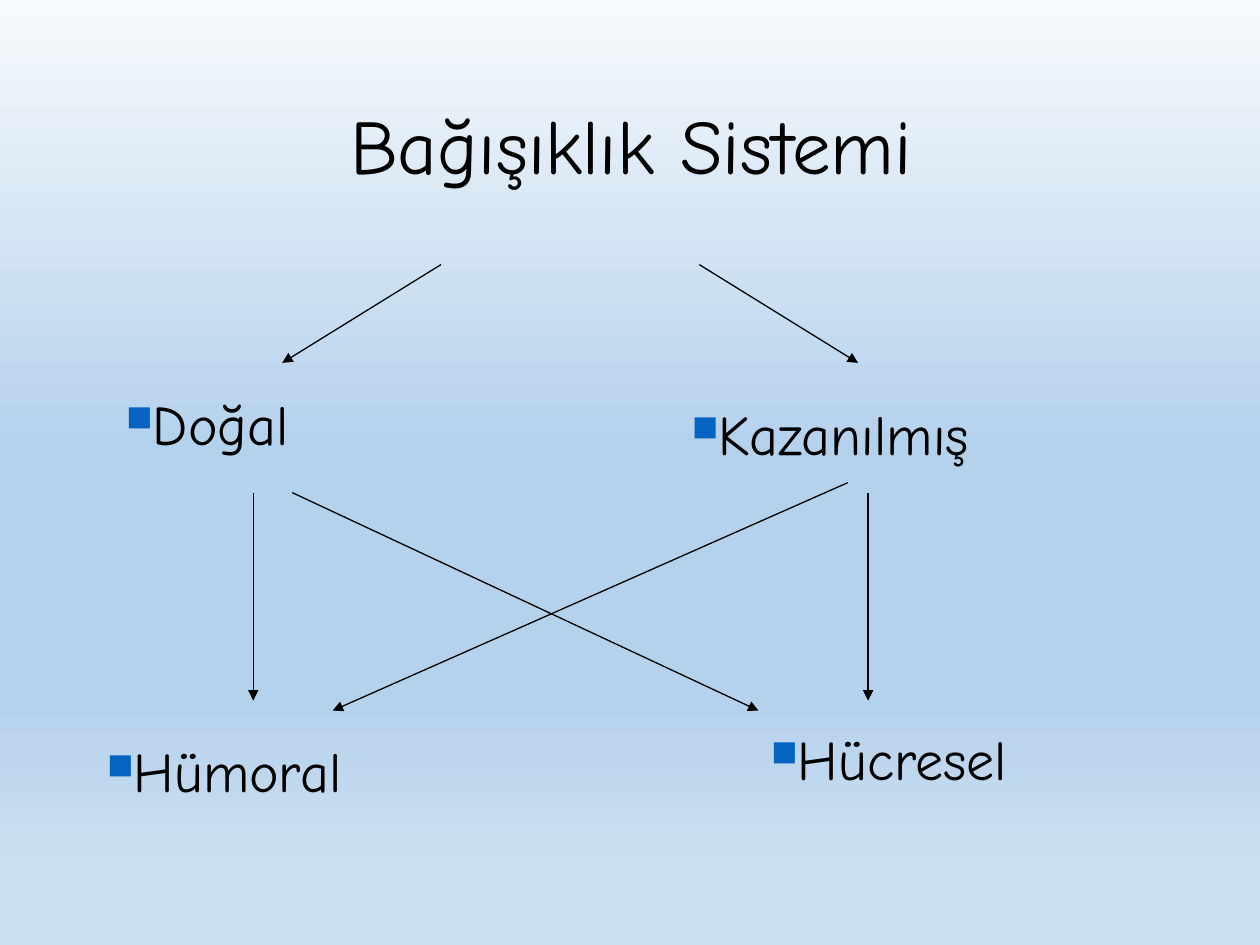
from lxml import etree
from pptx import Presentation
from pptx.dml.color import RGBColor
from pptx.enum.shapes import MSO_CONNECTOR
from pptx.enum.text import MSO_ANCHOR, MSO_AUTO_SIZE, PP_ALIGN
from pptx.oxml.ns import qn
from pptx.util import Inches, Pt

STRAIGHT = MSO_CONNECTOR.STRAIGHT
MIDDLE = MSO_ANCHOR.MIDDLE
FIT_SHAPE, FIT_NONE = MSO_AUTO_SIZE.SHAPE_TO_FIT_TEXT, MSO_AUTO_SIZE.NONE
LEFT, CENTER = PP_ALIGN.LEFT, PP_ALIGN.CENTER
FONT = "Comic Neue"
BLACK, BULLET_BLUE = "000000", "0563C1"
BACKGROUND_STOPS = [(0, "F7FAFD"), (47, "B5D2EC"), (74, "B5D2EC"), (94, "CEE1F2")]
LABELS = [
    ("Doğal", 0.9, 3.04, 2.44, True),
    ("Kazanılmış", 5.39, 3.12, 3.47, True),
    ("Hümoral", 0.75, 5.8, 2.84, True),
    ("Hücresel", 6.02, 5.7, 2.26, False),
]
ARROWS = [
    ((3.5, 2.1), (2.24, 2.88)),
    ((5.55, 2.1), (6.81, 2.88)),
    ((2.01, 3.91), (2.01, 5.56)),
    ((2.32, 3.91), (6.02, 5.64)),
    ((6.73, 3.83), (2.64, 5.64)),
    ((6.89, 3.91), (6.89, 5.56)),
]


def color(value):
    return RGBColor.from_string(value)


def add_xml(parent, tag, **attributes):
    return etree.SubElement(parent, qn(tag), attributes)


def set_background(s):
    fill = s.background.fill
    fill.gradient()
    fill.gradient_angle = 270
    stops = s.element.find(".//" + qn("a:gsLst"))
    for stop in list(stops):
        stops.remove(stop)
    for position, value in BACKGROUND_STOPS:
        stop = add_xml(stops, "a:gs", pos=str(position * 1000))
        add_xml(stop, "a:srgbClr", val=value)


def write_text(tf, text, size, align=LEFT, space_before=0, line_spacing=1.0):
    p = tf.paragraphs[0]
    p.alignment = align
    p.line_spacing = line_spacing
    p.space_before = Pt(space_before)
    r = p.add_run()
    r.text = text
    r.font.name = FONT
    r.font.size = Pt(size)
    r.font.color.rgb = color(BLACK)
    return p


def add_bullet(p):
    properties = p._p.get_or_add_pPr()
    add_xml(add_xml(properties, "a:buClr"), "a:srgbClr", val=BULLET_BLUE)
    add_xml(properties, "a:buSzPct", val="65000")
    add_xml(properties, "a:buChar", char="■")


def add_title(s, text):
    sp = s.shapes.title
    sp.left, sp.top = Inches(0.51), Inches(0.44)
    sp.width, sp.height = Inches(9), Inches(1.5)
    tf = sp.text_frame
    tf.vertical_anchor = MIDDLE
    tf.auto_size = FIT_NONE
    write_text(tf, text, 44, align=CENTER, line_spacing=0.9)


def add_label(s, text, left, top, width, wrap):
    sp = s.shapes.add_textbox(Inches(left), Inches(top), Inches(width), Inches(0.63))
    tf = sp.text_frame
    tf.word_wrap = wrap
    tf.auto_size = FIT_SHAPE
    add_bullet(write_text(tf, text, 32, space_before=6.4))


def add_arrow(s, start, end):
    points = [Inches(value) for value in start + end]
    line = s.shapes.add_connector(STRAIGHT, *points)
    line.line.color.rgb = color(BLACK)
    line.line.width = Pt(0.75)
    add_xml(line.line._get_or_add_ln(), "a:tailEnd", type="triangle")
    add_xml(line._element.spPr, "a:effectLst")


def main():
    prs = Presentation()
    prs.slide_width, prs.slide_height = Inches(10), Inches(7.5)
    s = prs.slides.add_slide(prs.slide_layouts[5])
    set_background(s)
    add_title(s, "Bağışıklık Sistemi")
    for label in LABELS:
        add_label(s, *label)
    for start, end in ARROWS:
        add_arrow(s, start, end)
    prs.save("out.pptx")


if __name__ == "__main__":
    main()
